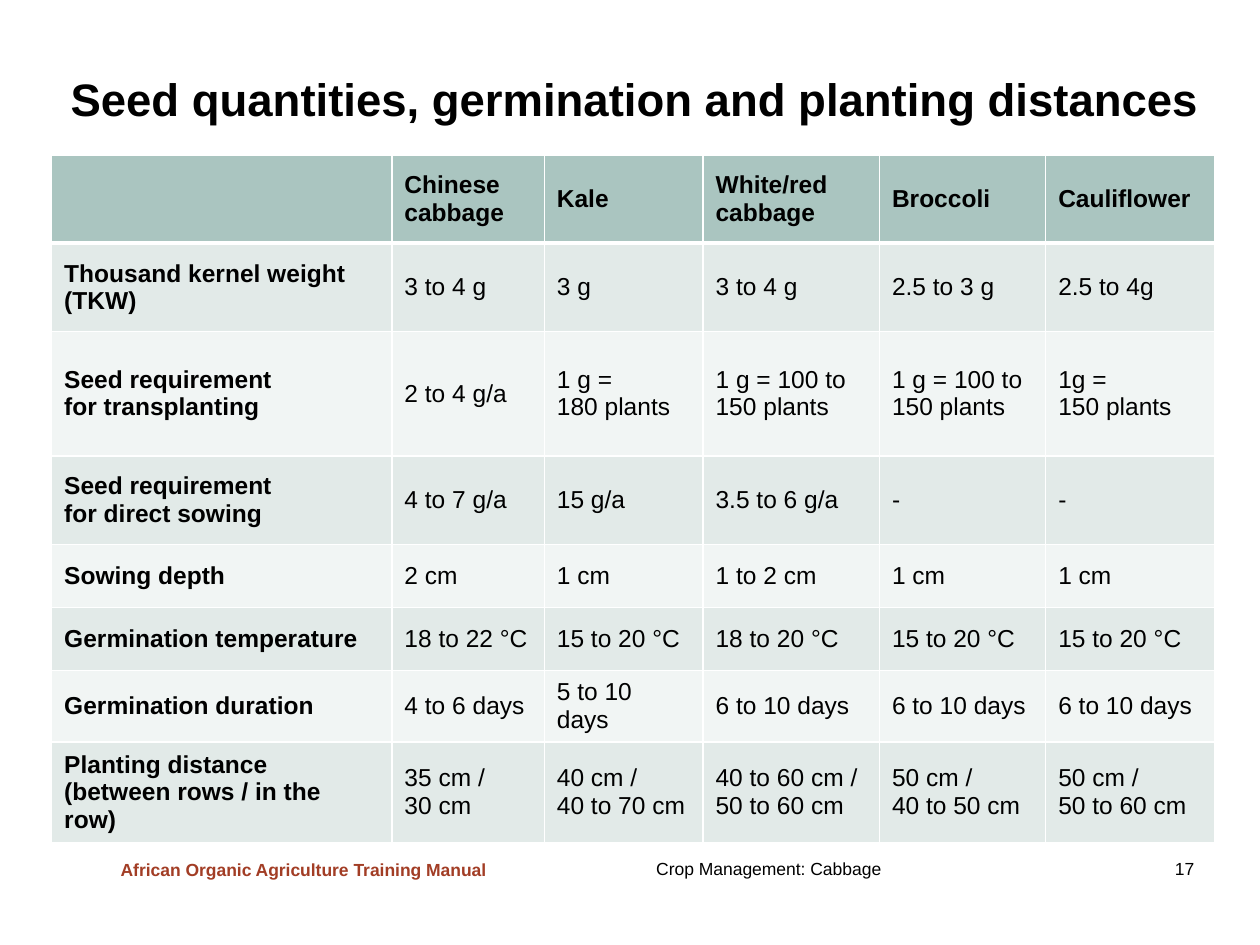
import copy

import pptx
import pptx.dml.color
import pptx.enum.text
import pptx.oxml
import pptx.oxml.ns
import pptx.util

COLORS = {
    "text": "000000",
    "accent": "A23D25",
    "header": "AAC5C0",
    "odd": "E2EAE8",
    "even": "F1F5F4",
    "border": "FFFFFF",
}
FONT = "Arial"
GRID_COLUMNS, GRID_ROWS = 100, 75

COLUMN_WIDTHS = [27, 12.1, 12.6, 14, 13.2, 13.4]
ROW_HEIGHTS = [7, 7, 9.9, 7, 5, 5, 5, 7]
SEED_DATA = [
    ["", "Chinese cabbage", "Kale", "White/red cabbage", "Broccoli", "Cauliflower"],
    ["Thousand kernel weight (TKW)", "3 to 4 g", "3 g", "3 to 4 g", "2.5 to 3 g", "2.5 to 4g"],
    ["Seed requirement \vfor transplanting", "2 to 4 g/a", "1 g = \v180 plants",
     "1 g = 100 to 150 plants", "1 g = 100 to 150 plants", "1g = \v150 plants"],
    ["Seed requirement \vfor direct sowing", "4 to 7 g/a", "15 g/a", "3.5 to 6 g/a", "-", "-"],
    ["Sowing depth", "2 cm", "1 cm", "1 to 2 cm", "1 cm", "1 cm"],
    ["Germination temperature", "18 to 22 °C", "15 to 20 °C", "18 to 20 °C",
     "15 to 20 °C", "15 to 20 °C"],
    ["Germination duration", "4 to 6 days", "5 to 10 days", "6 to 10 days",
     "6 to 10 days", "6 to 10 days"],
    ["Planting distance \v(between rows / in the row)", "35 cm / \v30 cm",
     "40 cm /\v40 to 70 cm", "40 to 60 cm / 50 to 60 cm",
     "50 cm / \v40 to 50 cm", "50 cm /\v50 to 60 cm"],
]


def write_text(paragraph, text, size=14, bold=False, color="text", align="LEFT"):
    """Fill a paragraph; a vertical tab in the text is a line break."""
    paragraph.text = text
    paragraph.alignment = getattr(pptx.enum.text.PP_ALIGN, align)
    for run in paragraph.runs:
        run.font.name = FONT
        run.font.size = pptx.util.Pt(size)
        run.font.bold = bold
        run.font.color.rgb = pptx.dml.color.RGBColor.from_string(COLORS[color])
    # Line breaks take the run format, so that line heights agree
    for line_break in paragraph._p.findall(pptx.oxml.ns.qn("a:br")):
        line_break.insert(0, copy.deepcopy(paragraph.runs[0].font._rPr))


class SlideBuilder:
    def __init__(self, presentation):
        self.column = presentation.slide_width / GRID_COLUMNS
        self.row = presentation.slide_height / GRID_ROWS
        self.slide = presentation.slides.add_slide(presentation.slide_layouts[5])

    def box(self, left, top, width, height):
        return (round(left * self.column), round(top * self.row),
                round(width * self.column), round(height * self.row))

    def title(self, text, at):
        shape = self.slide.shapes.title
        shape.left, shape.top, shape.width, shape.height = self.box(*at)
        frame = shape.text_frame
        frame.auto_size = pptx.enum.text.MSO_AUTO_SIZE.NONE
        frame.vertical_anchor = pptx.enum.text.MSO_ANCHOR.MIDDLE
        frame.margin_left = frame.margin_top = 0
        frame.margin_right = pptx.util.Inches(0.1)
        frame.margin_bottom = pptx.util.Inches(0.05)
        write_text(frame.paragraphs[0], text, size=26, bold=True)

    def text(self, text, at, wrap=True, right_tab=None, **text_format):
        frame = self.slide.shapes.add_textbox(*self.box(*at)).text_frame
        frame.word_wrap = wrap
        frame.auto_size = pptx.enum.text.MSO_AUTO_SIZE.SHAPE_TO_FIT_TEXT
        frame.vertical_anchor = pptx.enum.text.MSO_ANCHOR.MIDDLE
        paragraph = frame.paragraphs[0]
        if right_tab:
            position = round(right_tab * self.column)
            paragraph._p.get_or_add_pPr().append(pptx.oxml.parse_xml(
                f'<a:tabLst {pptx.oxml.ns.nsdecls("a")}>'
                f'<a:tab pos="{position}" algn="r"/></a:tabLst>'))
        write_text(paragraph, text, **text_format)

    def borders(self, cell, **widths):
        properties = cell._tc.get_or_add_tcPr()
        for index, side in enumerate(("L", "R", "T", "B")):
            width = pptx.util.Pt(widths.get(side, 1))
            properties.insert(index, pptx.oxml.parse_xml(
                f'<a:ln{side} {pptx.oxml.ns.nsdecls("a")} w="{width}"><a:solidFill>'
                f'<a:srgbClr val="{COLORS["border"]}"/></a:solidFill></a:ln{side}>'))

    def table(self, data, left, top, widths, heights):
        at = self.box(left, top, sum(widths), sum(heights))
        table = self.slide.shapes.add_table(len(data), len(data[0]), *at).table
        table.horz_banding = False
        for column, width in zip(table.columns, widths):
            column.width = round(width * self.column)
        for row, height in zip(table.rows, heights):
            row.height = round(height * self.row)
        for row_index, values in enumerate(data):
            fill = "header" if row_index == 0 else ("even", "odd")[row_index % 2]
            # The header is set off by a thicker line
            thick = {0: {"B": 3}, 1: {"T": 3}}.get(row_index, {})
            for column_index, value in enumerate(values):
                cell = table.cell(row_index, column_index)
                cell.vertical_anchor = pptx.enum.text.MSO_ANCHOR.MIDDLE
                cell.fill.solid()
                cell.fill.fore_color.rgb = pptx.dml.color.RGBColor.from_string(COLORS[fill])
                self.borders(cell, **thick)
                write_text(cell.text_frame.paragraphs[0], value,
                           bold=row_index == 0 or column_index == 0)


def main():
    presentation = pptx.Presentation()
    presentation.slide_width = pptx.util.Inches(10)
    presentation.slide_height = pptx.util.Inches(7.5)
    builder = SlideBuilder(presentation)

    # Footer
    builder.text("Crop Management: Cabbage\t17", (51.1, 67.6, 48.1, 2.7),
                 right_tab=42.7, size=10, align="JUSTIFY")
    builder.text("African Organic Agriculture Training Manual", (8.6, 67.7, 31.4, 2.7),
                 wrap=False, size=10, bold=True, color="accent")

    # Title and table
    builder.title("Seed quantities, germination and planting distances",
                  (5.6, 5.3, 91.7, 5.5))
    builder.table(SEED_DATA, 4.1, 12.3, COLUMN_WIDTHS, ROW_HEIGHTS)

    presentation.save("out.pptx")


if __name__ == "__main__":
    main()
